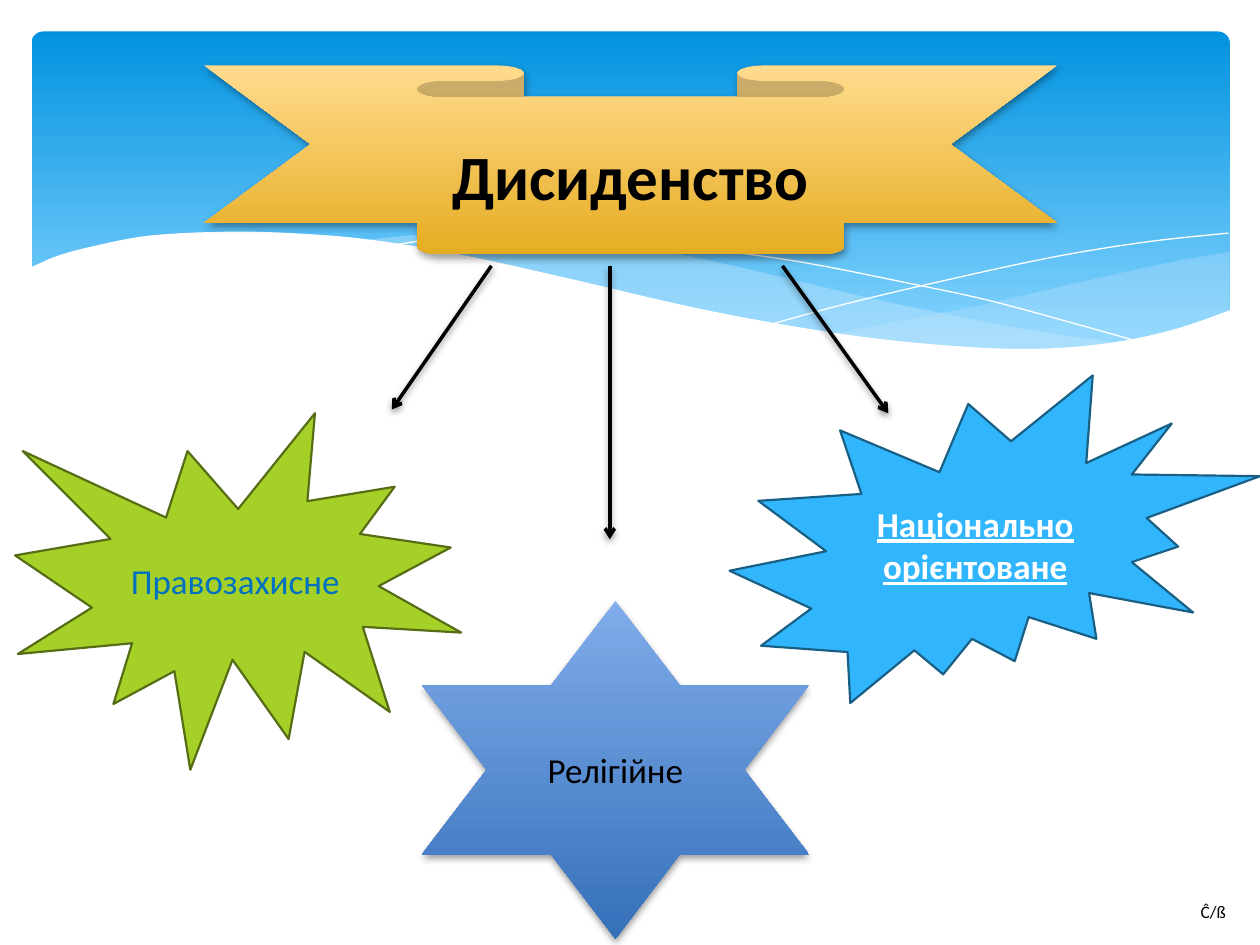
"""Builds a slide on the three currents of the dissident movement."""
from lxml import etree
from pptx import Presentation
from pptx.dml.color import RGBColor
from pptx.enum.dml import MSO_THEME_COLOR
from pptx.enum.shapes import MSO_CONNECTOR, MSO_SHAPE
from pptx.enum.text import MSO_ANCHOR, PP_ALIGN
from pptx.oxml import parse_xml
from pptx.oxml.ns import nsdecls, qn
from pptx.util import Inches, Pt

ROUND, RIBBON = MSO_SHAPE.ROUNDED_RECTANGLE, MSO_SHAPE.WAVE
RIBBON = MSO_SHAPE.DOWN_RIBBON
BURST_1, BURST_2 = MSO_SHAPE.EXPLOSION1, MSO_SHAPE.EXPLOSION2
STAR = MSO_SHAPE.STAR_6_POINT
STRAIGHT = MSO_CONNECTOR.STRAIGHT
CENTER, LEFT = PP_ALIGN.CENTER, PP_ALIGN.LEFT
MIDDLE = MSO_ANCHOR.MIDDLE

CELL = 0.1
COLUMNS, ROWS = 100, 75
FONT = "Calibri"
COLORS = {
    "sky": "0293E0", "pale_sky": "83D3FE", "mist": "C6E7FC",
    "white": "FFFFFF", "black": "000000",
    "gold_light": "FFDB8E", "gold": "E6AD22",
    "green": "A5D028", "green_edge": "566D15", "green_text": "0070C0",
    "blue_light": "80ACEA", "blue": "3570BA",
    "azure": "31B6FD", "azure_edge": "195F84",
}


def grid(cells):
    return Inches(cells * CELL)


def rgb(name):
    return RGBColor.from_string(COLORS[name])


def smooth(points, steps=6):
    """Return a Catmull-Rom curve through the points."""
    padded = [points[0], *points, points[-1]]
    curve = [points[0]]
    for a, b, c, d in zip(padded, padded[1:], padded[2:], padded[3:]):
        for step in range(1, steps + 1):
            t = step / steps
            curve.append(tuple(
                (2 * q + (r - p) * t + (2 * p - 5 * q + 4 * r - s) * t ** 2
                 + (3 * q - p - 3 * r + s) * t ** 3) / 2
                for p, q, r, s in zip(a, b, c, d)))
    return curve


def write(shape, text, size=20, color="black", bold=False, underline=False,
          align=CENTER, wrap=True):
    frame = shape.text_frame
    frame.word_wrap = wrap
    paragraph = frame.paragraphs[0]
    paragraph.alignment = align
    run = paragraph.add_run()
    run.text = text
    font = run.font
    font.name, font.size, font.bold, font.underline = FONT, Pt(size), bold, underline
    font.color.rgb = rgb(color)


class Board:
    """Holds the slide and draws each kind of element on its grid."""

    def __init__(self, slide):
        self.slide = slide

    def paint(self, shape, fill=None, edge=None, width=1.25, alpha=None):
        shape.shadow.inherit = False
        if fill is None:
            shape.fill.background()
        elif isinstance(fill, tuple):
            start, end, reach = fill
            shape.fill.gradient()
            shape.fill.gradient_angle = 270
            for stop, name, position in zip(
                    shape.fill.gradient_stops, (start, end), (0, reach)):
                stop.color.rgb = rgb(name)
                stop.position = position
        else:
            shape.fill.solid()
            shape.fill.fore_color.rgb = rgb(fill)
        if alpha is not None:
            tone = shape.fill._xPr.find(qn("a:solidFill"))[0]
            etree.SubElement(tone, qn("a:alpha"), val=str(alpha * 1000))
        if edge:
            shape.line.color.rgb = rgb(edge)
            shape.line.width = Pt(width)
        else:
            shape.line.fill.background()

    def cast_shadow(self, shape):
        properties = shape._element.spPr
        effects = properties.find(qn("a:effectLst"))
        if effects is None:
            effects = etree.SubElement(properties, qn("a:effectLst"))
        effects.append(parse_xml(
            f'<a:outerShdw {nsdecls("a")} blurRad="{Pt(4)}" dist="{Pt(2)}" '
            'dir="5400000" rotWithShape="0"><a:srgbClr val="000000">'
            '<a:alpha val="38000"/></a:srgbClr></a:outerShdw>'))

    def shape(self, kind, box, fill, edge=None, shadow=False, corner=None):
        shape = self.slide.shapes.add_shape(kind, *map(grid, box))
        if corner is not None:
            shape.adjustments[0] = corner
        self.paint(shape, fill, edge)
        if shadow:
            self.cast_shadow(shape)
        shape.text_frame.vertical_anchor = MIDDLE
        return shape

    def outline(self, points, closed=True, **style):
        start, *rest = [(grid(x), grid(y)) for x, y in points]
        builder = self.slide.shapes.build_freeform(*start)
        builder.add_line_segments(rest, close=closed)
        self.paint(builder.convert_to_shape(), **style)

    def arrow(self, start, end):
        arrow = self.slide.shapes.add_connector(
            STRAIGHT, *map(grid, (*start, *end)))
        arrow.line.color.rgb = rgb("black")
        arrow.line.width = Pt(2)
        etree.SubElement(arrow.line._ln, qn("a:tailEnd"), type="arrow")
        self.cast_shadow(arrow)

    def label(self, text, box, **style):
        write(self.slide.shapes.add_textbox(*map(grid, box)), text, **style)


def draw_waves(board):
    right_wave = (
        smooth([(97.6, 20), (93.5, 20.7), (86.1, 22.3), (77.9, 24.2), (66.1, 26.5)])
        + smooth([(66.1, 26.5), (71.9, 27.1), (76.9, 27.65), (81.4, 27.8),
                  (86.3, 27.5), (90.5, 26.9), (94.2, 25.9), (97.6, 24.7)]))
    middle_wave = (
        smooth([(89.3, 27.3), (80.7, 26), (70.6, 24), (62.9, 22.2), (55.5, 20.5),
                (48.9, 19.4), (42, 18.7), (36.1, 18.5), (31.3, 18.8), (28.6, 19.1)])
        + smooth([(28.6, 19.1), (36.2, 20.3), (44.9, 22.2), (56.6, 24.8),
                  (66.5, 26.6), (73.6, 27.5), (80.7, 27.8), (85.7, 27.7), (89.3, 27.3)]))
    falling_line = smooth([(30.9, 19.5), (35.3, 18.9), (41.6, 18.7), (48.9, 19),
                           (55.6, 19.7), (63.6, 20.8), (72.7, 22.6),
                           (79.5, 24.1), (90.7, 27.2)])
    rising_line = smooth([(61.3, 25.7), (67.2, 24.1), (74.8, 22.3), (83.6, 20.4),
                          (91, 19.2), (97.5, 18.5)])
    white_wave = smooth([(97.7, 24.6), (93, 26.2), (87.5, 27.3), (80.9, 27.7),
                         (72.6, 27.2), (64.8, 26.2), (55.5, 24.5), (44.7, 22),
                         (36.5, 20.2), (29.2, 19), (23, 18.5), (17.7, 18.4),
                         (11.9, 18.7), (7.6, 19.5), (4.6, 20.3), (2.3, 21.3)])
    board.outline(right_wave, fill="mist", alpha=29)
    board.outline(middle_wave, fill="mist", alpha=40)
    for line in (falling_line, rising_line):
        board.outline(line, closed=False, edge="white", width=0)
    board.outline(white_wave + [(2.3, 32.9), (97.7, 32.9)], fill="white")


def main():
    deck = Presentation()
    deck.slide_width, deck.slide_height = grid(COLUMNS), grid(ROWS)
    board = Board(deck.slides.add_slide(deck.slide_layouts[6]))

    board.shape(ROUND, (2.5, 2.5, 95.1, 27), ("sky", "pale_sky", 0.9), corner=0.034)
    draw_waves(board)

    title = board.shape(RIBBON, (16.2, 5.2, 67.7, 15),
                        ("gold_light", "gold", 1), shadow=True)
    write(title, "Дисиденство", size=36, bold=True)
    rights = board.shape(BURST_1, (1.2, 32.8, 35.4, 28.3), "green", "green_edge")
    write(rights, "Правозахисне", color="green_text")
    religious = board.shape(STAR, (33.5, 47.7, 30.7, 26.8),
                            ("blue_light", "blue", 1), shadow=True)
    write(religious, "Релігійне")
    national = board.shape(BURST_2, (57.9, 29.8, 42.1, 26), "azure", "azure_edge")
    write(national, "Національно орієнтоване", color="white", bold=True, underline=True)

    for start, end in (((62.1, 21.1), (70.5, 32.8)),
                       ((48.4, 21.1), (48.4, 42.8)),
                       ((39, 21.1), (31.1, 32.5))):
        board.arrow(start, end)
    board.label("Ĉ/ß", (94.3, 71, 4.1, 2.7), size=10, align=LEFT, wrap=False)
    deck.save("out.pptx")


if __name__ == "__main__":
    main()
